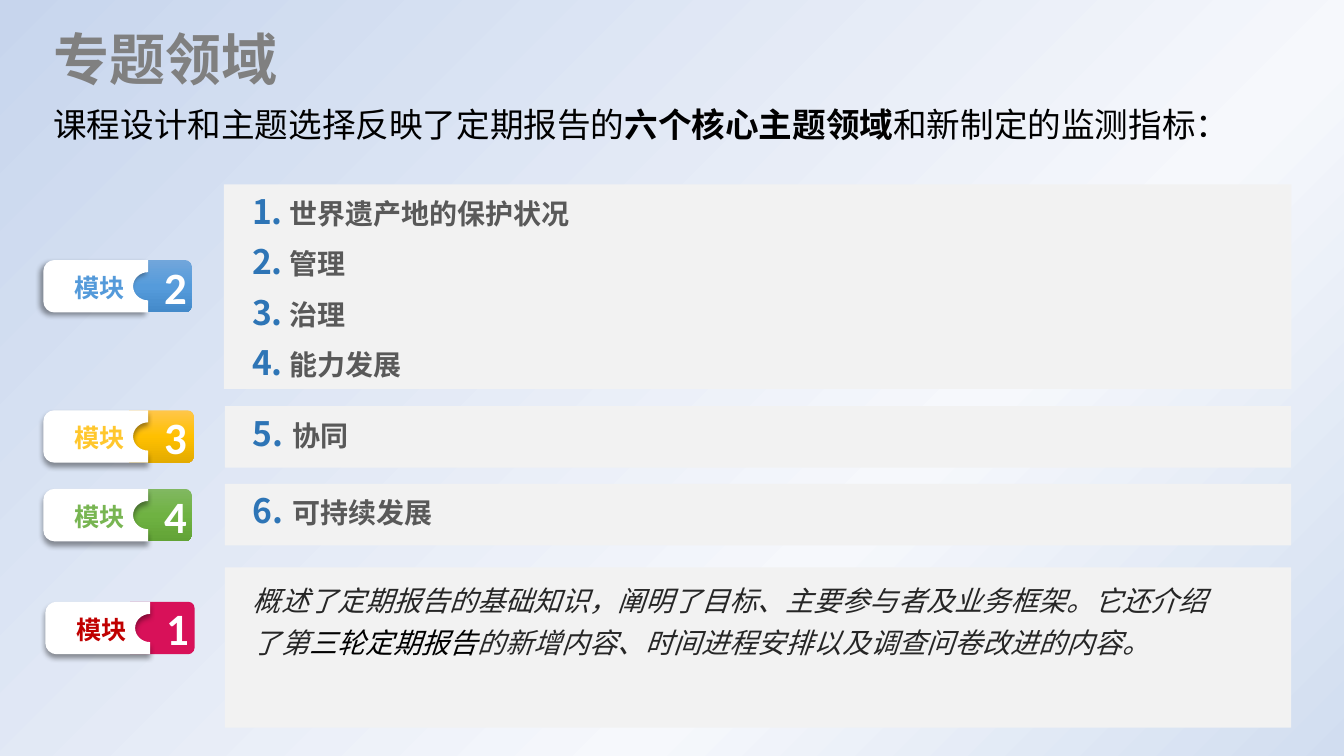
from lxml.etree import SubElement
from pptx import Presentation
from pptx.dml.color import RGBColor
from pptx.enum.shapes import MSO_SHAPE as Preset
from pptx.enum.text import MSO_ANCHOR as Anchor, PP_ALIGN as Align
from pptx.oxml.ns import qn
from pptx.util import Inches, Pt

CELL = 0.1  # inches per grid column and row
COLUMNS, ROWS = 133.33, 75
SANS, LATIN = "Noto Sans CJK SC", "Calibri"
COLORS = {
    "title": "808080", "black": "000000", "white": "FFFFFF", "panel": "F2F2F2",
    "topic": "595959", "number": "2E75B6", "overview": "262626",
}
BACKGROUND = [(0, "D1DDF0"), (34, "F6F8FC"), (100, "C7D5ED")]
# number, left, top, extra tab offset, shadow direction, label colour, tab colours
TOPIC_BADGES = [
    ("2", 4.3, 25.8, 0, 135, "549ADA", ["71A6DB", "559BDB", "448ACA"]),
    ("3", 4.3, 40.7, 0.2, 90, "FFC72D", ["FFC64B", "FFC000", "E3AB00"]),
    ("4", 4.3, 48.5, 0, 90, "78B552", ["81B861", "6FB242", "62A336"]),
]
OVERVIEW_BADGE = ("1", 4.5, 59.7, 0.1, 90, "C00000", ["D81159"])
# left, top, width, height, first number, topics
TOPIC_PANELS = [
    (22.2, 18.3, 105.9, 20.3, 1, ["世界遗产地的保护状况", "管理", "治理", "能力发展"]),
    (22.3, 40.3, 105.8, 6.1, 5, ["协同"]),
    (22.3, 48, 105.8, 6.1, 6, ["可持续发展"]),
]


def grid(*cells):
    return [Inches(count * CELL) for count in cells]


def rgb(color):
    return RGBColor.from_string(color)


def add_xml(parent, tag, **attributes):
    return SubElement(parent, qn(tag), {key: str(value) for key, value in attributes.items()})


def fill_gradient(fill, owner, stops):
    """Apply the stops and return the gradient element, still without a direction."""
    fill.gradient()
    gradient = owner.find(".//" + qn("a:gradFill"))
    for child in list(gradient):
        gradient.remove(child)
    stop_list = add_xml(gradient, "a:gsLst")
    for position, color in stops:
        stop = add_xml(stop_list, "a:gs", pos=position * 1000)
        add_xml(stop, "a:srgbClr", val=color)
    return gradient


def paint_background(slide):
    gradient = fill_gradient(slide.background.fill, slide.element, BACKGROUND)
    direction = add_xml(gradient, "a:path", path="circle")
    add_xml(direction, "a:fillToRect", l=100000, t=100000)


def finish_shape(shape, color):
    shape.shadow.inherit = False
    shape.line.fill.background()
    shape.fill.solid()
    shape.fill.fore_color.rgb = rgb(color)


def add_run(paragraph, text, size, color, font=SANS, bold=False, italic=False):
    run = paragraph.add_run()
    run.text = text
    run.font.name, run.font.size = font, Pt(size)
    run.font.bold, run.font.italic = bold, italic
    run.font.color.rgb = rgb(color)
    add_xml(run._r.get_or_add_rPr(), "a:ea", typeface=font)


def add_text_box(shapes, box, anchor=Anchor.TOP, align=Align.LEFT):
    """Add a wrapping text box and return its first paragraph."""
    frame = shapes.add_textbox(*grid(*box)).text_frame
    frame.word_wrap = True
    frame.vertical_anchor = anchor
    frame.paragraphs[0].alignment = align
    return frame.paragraphs[0]


def add_panel(shapes, box, top_inset):
    panel = shapes.add_shape(Preset.RECTANGLE, *grid(*box))
    finish_shape(panel, COLORS["panel"])
    frame = panel.text_frame
    frame.word_wrap = True
    frame.vertical_anchor = Anchor.TOP
    (frame.margin_left, frame.margin_top,
     frame.margin_right, frame.margin_bottom) = grid(2.8, top_inset, 8.3, 0.5)
    return frame


def number_paragraph(paragraph, start, indent):
    properties = paragraph._p.get_or_add_pPr()
    properties.set("marL", str(indent))
    properties.set("indent", str(-indent))
    add_xml(add_xml(properties, "a:buClr"), "a:srgbClr", val=COLORS["number"])
    add_xml(properties, "a:buSzPct", val=120000)
    add_xml(properties, "a:buAutoNum", type="arabicPeriod", startAt=start)


def add_topic_panel(shapes, left, top, width, height, start, topics):
    frame = add_panel(shapes, (left, top, width, height), 1.2)
    indent = Inches(0.37 if len(topics) > 1 else 0.39)
    for index, topic in enumerate(topics):
        paragraph = frame.add_paragraph() if index else frame.paragraphs[0]
        paragraph.alignment = Align.LEFT
        paragraph.space_before = Pt(12)
        number_paragraph(paragraph, start, indent)
        add_run(paragraph, topic, 20, COLORS["topic"], bold=True)


def curve_segment(line, start, corner, end):
    """Turn a straight segment into a quarter ellipse that bends towards the corner."""
    curve = line.getparent().makeelement(qn("a:cubicBezTo"))
    controls = [[edge + 0.55 * (bend - edge) for edge, bend in zip(point, corner)]
                for point in (start, end)]
    for point in (*controls, end):
        x, y = grid(*point)
        add_xml(curve, "a:pt", x=x, y=y)
    line.getparent().replace(line, curve)


def add_tongue(shapes, left, top, shadow_direction):
    """White label plate: notched at its head, rounded at its foot, turned a quarter."""
    width, height, corner = 5.2, 10.4, 1.1
    notch_left, notch_right, depth = 1.2, 4, 1.5
    # end point of each segment, and the corner it bends towards if it is curved
    segments = [
        ((notch_left, 0), None),
        ((width / 2, depth), (notch_left, depth)),
        ((notch_right, 0), (notch_right, depth)),
        ((width, 0), None),
        ((width, height - corner), None),
        ((width - corner, height), (width, height)),
        ((corner, height), None),
        ((0, height - corner), (0, height)),
    ]
    ends = [end for end, _ in segments]
    builder = shapes.build_freeform(0, 0, scale=1.0)
    builder.add_line_segments([grid(*end) for end in ends], close=True)
    shift = (height - width) / 2
    tongue = builder.convert_to_shape(*grid(left + shift, top - shift))
    lines = tongue.element.findall(".//" + qn("a:lnTo"))
    for line, start, (end, bend) in zip(lines, [(0, 0)] + ends, segments):
        if bend:
            curve_segment(line, start, bend, end)
    tongue.rotation = 90
    finish_shape(tongue, COLORS["white"])
    effects = tongue.element.spPr.find(qn("a:effectLst"))
    shadow = add_xml(effects, "a:outerShdw", blurRad=Pt(4), dist=Pt(3),
                     dir=shadow_direction * 60000, algn="ctr", rotWithShape=0)
    add_xml(add_xml(shadow, "a:srgbClr", val=COLORS["black"]), "a:alpha", val=40000)


def add_badge(slide, number, left, top, offset, shadow_direction, color, tab_colors):
    shapes = slide.shapes.add_group_shape().shapes
    tab = shapes.add_shape(Preset.ROUND_2_SAME_RECTANGLE,
                           *grid(left + 8.9 + offset, top - 0.6, 5.2, 6.4))
    tab.adjustments[0], tab.adjustments[1] = 0.12, 0
    tab.rotation = 90
    finish_shape(tab, tab_colors[0])
    if len(tab_colors) > 1:
        gradient = fill_gradient(tab.fill, tab.element, zip((0, 50, 100), tab_colors))
        gradient.set("rotWithShape", "0")
        add_xml(gradient, "a:lin", ang=90 * 60000, scaled=0)
    digit = add_text_box(shapes, (left + 11, top - 0.6, 2.9, 6.4), Anchor.MIDDLE, Align.CENTER)
    add_run(digit, number, 32, COLORS["white"], LATIN, bold=True)
    add_tongue(shapes, left, top, shadow_direction)
    label = add_text_box(shapes, (left + 1.7, top + 0.7, 7.7, 4), Anchor.MIDDLE, Align.CENTER)
    add_run(label, "模块", 18, color, bold=True)


def add_title(shapes):
    title = add_text_box(shapes, (4.3, 1.9, 122.8, 7.7))
    add_run(title, "专题领域", 40, COLORS["title"], LATIN, bold=True)


def add_introduction(shapes):
    introduction = add_text_box(shapes, (4.3, 9.2, 122.8, 8.6))
    introduction.line_spacing, introduction.space_before = 1.15, Pt(6)
    add_run(introduction, "课程设计和主题选择反映了定期报告的", 24, COLORS["black"])
    add_run(introduction, "六个核心主题领域", 24, COLORS["black"], bold=True)
    add_run(introduction, "和新制定的监测指标：", 24, COLORS["black"])


def add_overview(shapes):
    paragraph = add_panel(shapes, (22.3, 56.3, 105.8, 15.9), 0.8).paragraphs[0]
    paragraph.alignment = Align.LEFT
    paragraph.line_spacing, paragraph.space_before = Pt(30), Pt(12)
    for text, color in [
        ("概述了定期报告的基础知识，阐明了目标、主要参与者及业务框架。它还介绍了第", "overview"),
        ("三轮定期报告", "black"),
        ("的新增内容、时间进程安排以及调查问卷改进的内容。", "overview"),
    ]:
        add_run(paragraph, text, 20, COLORS[color], italic=True)


def main():
    presentation = Presentation()
    presentation.slide_width, presentation.slide_height = grid(COLUMNS, ROWS)
    slide = presentation.slides.add_slide(presentation.slide_layouts[6])
    paint_background(slide)
    add_introduction(slide.shapes)
    for badge in TOPIC_BADGES:
        add_badge(slide, *badge)
    add_title(slide.shapes)
    for panel in TOPIC_PANELS:
        add_topic_panel(slide.shapes, *panel)
    add_badge(slide, *OVERVIEW_BADGE)
    add_overview(slide.shapes)
    presentation.save("out.pptx")


if __name__ == "__main__":
    main()
